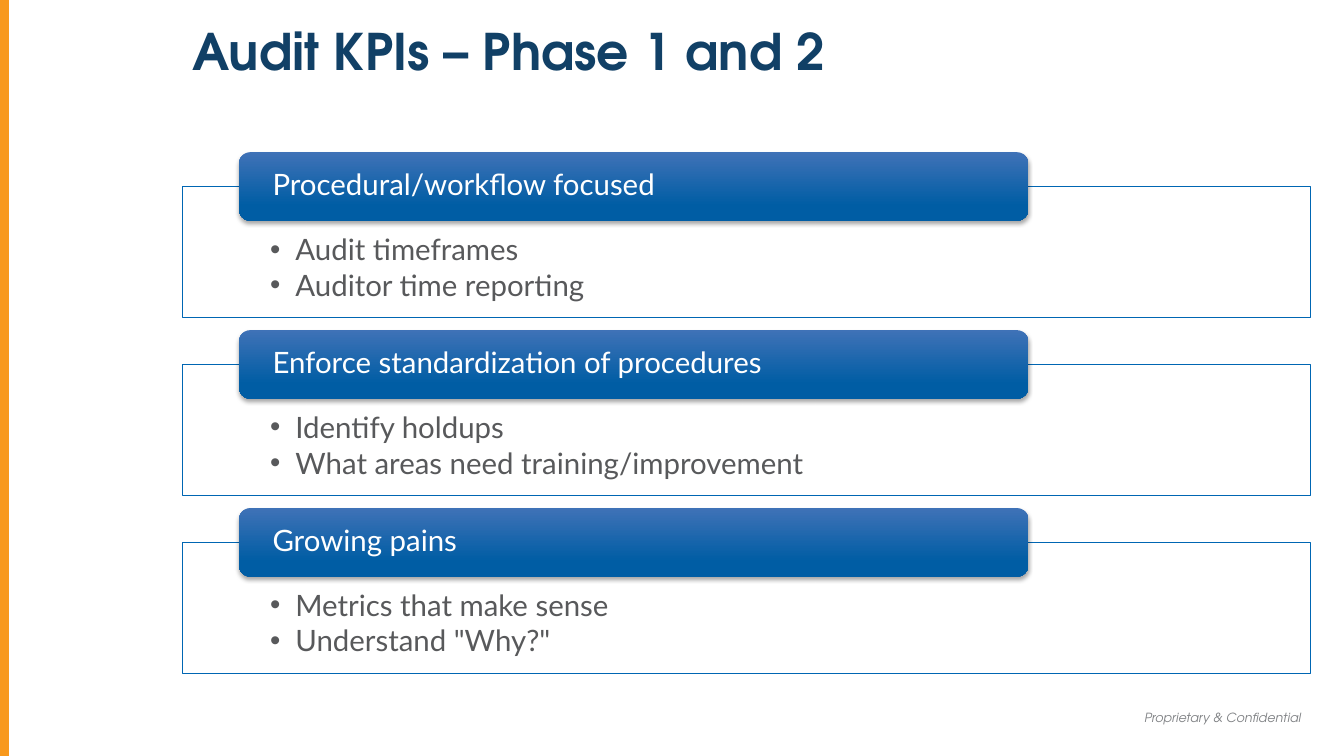
from lxml import etree
from pptx import Presentation
from pptx.dml.color import RGBColor
from pptx.enum import shapes, text
from pptx.oxml import ns
from pptx.util import Inches, Pt

TITLE = "Audit KPIs – Phase 1 and 2"
FOOTER = "Proprietary & Confidential"
PHASES = [
    ("Procedural/workflow focused", ["Audit timeframes", "Auditor time reporting"]),
    ("Enforce standardization of procedures",
     ["Identify holdups", "What areas need training/improvement"]),
    ("Growing pains", ["Metrics that make sense", 'Understand "Why?"']),
]

HEADING_FONT, BODY_FONT = "TeX Gyre Adventor", "Lato"
LEFT, WIDTH = 1.81, 11.19
FIRST_TOP, LAST_TOP = 1.51, 5.04
HEADER_LEFT, HEADER_WIDTH, HEADER_HEIGHT = 2.37, 7.83, 0.68
PANEL_HEIGHT = 1.3


def color(value):
    return RGBColor.from_string(value)


def add_element(parent, tag, **attributes):
    element = etree.SubElement(parent, ns.qn(tag))
    for name, value in attributes.items():
        element.set(name, str(value))
    return element


def write(shape, lines, font, size, hex_color, margins, anchor,
          bold=False, italic=False, alignment=text.PP_ALIGN.LEFT):
    frame = shape.text_frame
    frame.word_wrap = True
    frame.vertical_anchor = anchor
    (frame.margin_left, frame.margin_top,
     frame.margin_right, frame.margin_bottom) = map(Inches, margins)
    frame.text = "\n".join(lines)
    for paragraph in frame.paragraphs:
        paragraph.alignment = alignment
        for run in paragraph.runs:
            run.font.name = font
            run.font.size = Pt(size)
            run.font.bold = bold
            run.font.italic = italic
            run.font.color.rgb = color(hex_color)
    return frame.paragraphs


def add_box(slide, kind, left, top, width, height):
    shape = slide.shapes.add_shape(
        kind, Inches(left), Inches(top), Inches(width), Inches(height))
    shape.shadow.inherit = False
    return shape


def add_panel(slide, top, items):
    panel = add_box(slide, shapes.MSO_SHAPE.RECTANGLE, LEFT, top, WIDTH, PANEL_HEIGHT)
    panel.fill.solid()
    panel.fill.fore_color.rgb = color("FFFFFF")
    fill_color = panel._element.spPr.find(".//" + ns.qn("a:srgbClr"))
    add_element(fill_color, "a:alpha", val=90000)
    panel.line.color.rgb = color("0066B3")
    panel.line.width = Pt(1)
    paragraphs = write(panel, items, BODY_FONT, 21, "58595B",
                       (0.87, 0.48, 0.87, 0.16), text.MSO_ANCHOR.TOP)
    for paragraph in paragraphs:
        properties = paragraph._p.get_or_add_pPr()
        properties.set("marL", str(Inches(0.25)))
        properties.set("indent", str(-Inches(0.25)))
        add_element(properties, "a:buFont", typeface="Arial")
        add_element(properties, "a:buChar", char="•")
        paragraph.level = 1
        paragraph.line_spacing = 0.9
        paragraph.space_after = Pt(3)


def add_header(slide, top, heading):
    header = add_box(slide, shapes.MSO_SHAPE.ROUNDED_RECTANGLE,
                     HEADER_LEFT, top, HEADER_WIDTH, HEADER_HEIGHT)
    header.fill.gradient()
    header.fill.gradient_angle = 270
    for stop, (position, value) in zip(header.fill.gradient_stops,
                                       [(0, "3F72B7"), (0.78, "005DA4")]):
        stop.position = position
        stop.color.rgb = color(value)
    header.line.fill.background()
    effects = header._element.spPr.find(ns.qn("a:effectLst"))
    shadow = add_element(effects, "a:outerShdw", blurRad=Pt(3), dist=Pt(2),
                         dir=5400000, rotWithShape=0)
    add_element(add_element(shadow, "a:srgbClr", val="000000"), "a:alpha", val=35000)
    paragraphs = write(header, [heading], BODY_FONT, 21, "FFFFFF",
                       (0.3, 0, 0.3, 0), text.MSO_ANCHOR.MIDDLE)
    paragraphs[0].line_spacing = 0.9


def main():
    presentation = Presentation()
    presentation.slide_width = Inches(13.33)
    presentation.slide_height = Inches(7.5)
    slide = presentation.slides.add_slide(presentation.slide_layouts[6])

    stripe = slide.shapes.add_connector(
        shapes.MSO_CONNECTOR.STRAIGHT, Inches(0.03), 0, Inches(0.03), Inches(7.5))
    stripe.line.color.rgb = color("F8991D")
    stripe.line.width = Pt(8)
    add_element(stripe._element.spPr, "a:effectLst")

    margins = (0.1, 0.05, 0.1, 0.05)
    title = slide.shapes.add_textbox(Inches(LEFT), Inches(0.15), Inches(WIDTH), Inches(1))
    write(title, [TITLE], HEADING_FONT, 36, "114066", margins,
          text.MSO_ANCHOR.TOP, bold=True)
    footer = slide.shapes.add_textbox(
        Inches(10.97), Inches(6.91), Inches(2.03), Inches(0.33))
    write(footer, [FOOTER], HEADING_FONT, 9, "808285", margins,
          text.MSO_ANCHOR.BOTTOM, italic=True, alignment=text.PP_ALIGN.RIGHT)

    pitch = (LAST_TOP - FIRST_TOP) / (len(PHASES) - 1)
    for index, (heading, items) in enumerate(PHASES):
        top = FIRST_TOP + index * pitch
        add_panel(slide, top + HEADER_HEIGHT / 2, items)
        add_header(slide, top, heading)

    presentation.save("out.pptx")


if __name__ == "__main__":
    main()
